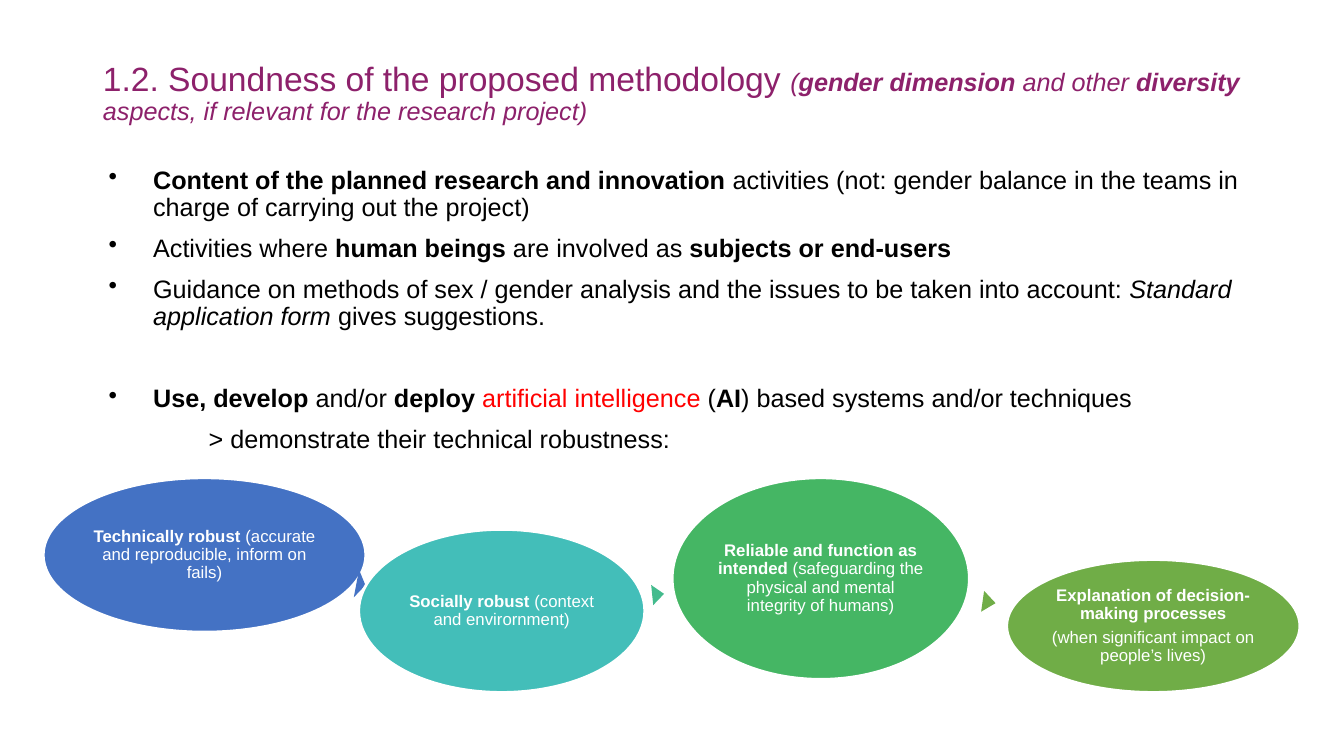
import lxml.etree
import pptx
import pptx.dml.color
import pptx.enum.shapes
import pptx.enum.text
import pptx.oxml.ns
import pptx.util

Cm, Pt = pptx.util.Cm, pptx.util.Pt
SHAPE = pptx.enum.shapes.MSO_SHAPE
ALIGN = pptx.enum.text.PP_ALIGN
ANCHOR = pptx.enum.text.MSO_ANCHOR

PURPLE, BLACK, RED, WHITE = "8D216B", "000000", "FF0000", "FFFFFF"

# Boxes: left, top, width, height in cm
TITLE_BOX = (2.34, 1.02, 29.21, 2.69)
BODY_BOX = (2.34, 4.09, 29.21, 13.08)
CHAIN_BOX = (1.09, 12.04, 31.67, 5.41)

# Text spans: wording, then style letters (b bold, i italic, r red, l large)
TITLE = [
    ("1.2. Soundness of the proposed methodology ", "l"), ("(", "i"),
    ("gender dimension ", "bi"), ("and other ", "i"), ("diversity", "bi"),
    (" aspects, if relevant for the research project)", "i"),
]
# Body paragraphs: space before in points, bulleted, spans
BODY = [
    (0, True, [
        ("Content of the planned research and innovation ", "b"),
        ("activities (not: gender balance in the teams in charge of "
         "carrying out the project)", "")]),
    (10, True, [
        ("Activities where ", ""), ("human beings ", "b"),
        ("are involved as ", ""), ("subjects or end-users", "b")]),
    (10, True, [
        ("Guidance on methods of sex / gender analysis and the issues "
         "to be taken into account: ", ""),
        ("Standard application form ", "i"), ("gives suggestions.", "")]),
    (39, True, [
        ("Use, develop", "b"), (" and/or ", ""), ("deploy ", "b"),
        ("artificial intelligence ", "r"), ("(", ""), ("AI", "b"),
        (") based systems and/or techniques", "")]),
    (10, False, [("> demonstrate their technical robustness:", "")]),
]
# Ellipses: place within the chain, colour, paragraphs of spans
ELLIPSES = [
    ((0, 0, 8.13, 3.89), "4472C4", [[
        ("Technically robust ", "b"),
        ("(accurate and reproducible, inform on fails)", "")]]),
    ((7.95, 1.3, 7.21, 4.11), "43BEB9", [[
        ("Socially robust ", "b"), ("(context and envirornment)", "")]]),
    ((15.85, 0, 7.49, 5.08), "45B664", [[
        ("Reliable and function as intended ", "b"),
        ("(safeguarding the physical and mental integrity of humans)", "")]]),
    ((24.28, 2.06, 7.39, 3.35), "70AD47", [
        [("Explanation of decision-making processes", "b")],
        [("(when significant impact on people’s lives)", "")]]),
]
# Arrowheads after the first three ellipses: place, colour, rotation
ARROWS = [
    ((7.65, 2.57, 0.71, 0.23), "4472C4", 100.7),
    ((15.24, 2.79, 0.51, 0.3), "43BB8D", 84.1),
    ((23.57, 2.97, 0.53, 0.33), "70AD47", 98.1),
]


def rgb(value):
    return pptx.dml.color.RGBColor.from_string(value)


def write(para, spans, size, color, align=ALIGN.LEFT):
    para.alignment = align
    para.line_spacing = 0.9
    para.font.name = "Arial"
    para.font.size = Pt(size)
    para.font.color.rgb = rgb(color)
    for words, style in spans:
        span = para.add_run()
        span.text = words
        if "b" in style:
            span.font.bold = True
        if "i" in style:
            span.font.italic = True
        if "l" in style:
            span.font.size = Pt(24)
        if "r" in style:
            span.font.color.rgb = rgb(RED)


def paragraph_at(frame, index):
    return frame.add_paragraph() if index else frame.paragraphs[0]


def indent(para, bulleted):
    properties = para._p.get_or_add_pPr()
    properties.set("marL", str(Cm(1.27 if bulleted else 2.67)))
    properties.set("indent", str(Cm(-1.12 if bulleted else 0)))
    if bulleted:
        bullet = lxml.etree.SubElement(properties, pptx.oxml.ns.qn("a:buChar"))
        bullet.set("char", "•")


def add_title(page, box):
    title = page.shapes.title
    title.left, title.top, title.width, title.height = map(Cm, box)
    frame = title.text_frame
    frame.auto_size = pptx.enum.text.MSO_AUTO_SIZE.NONE
    frame.vertical_anchor = ANCHOR.MIDDLE
    write(frame.paragraphs[0], TITLE, 18, PURPLE)


def add_body(page, box):
    frame = page.shapes.add_textbox(*map(Cm, box)).text_frame
    frame.word_wrap = True
    for index, (gap, bulleted, spans) in enumerate(BODY):
        para = paragraph_at(frame, index)
        indent(para, bulleted)
        para.space_before = Pt(gap)
        write(para, spans, 18, BLACK)


def add_filled(page, kind, box, place, color):
    left, top, width, height = place
    shape = page.shapes.add_shape(
        kind, Cm(box[0] + left), Cm(box[1] + top), Cm(width), Cm(height))
    shape.shadow.inherit = False
    shape.fill.solid()
    shape.fill.fore_color.rgb = rgb(color)
    return shape


def add_ellipse(page, box, place, color, paragraphs):
    ellipse = add_filled(page, SHAPE.OVAL, box, place, color)
    ellipse.line.color.rgb = rgb(WHITE)
    ellipse.line.width = Pt(2)
    frame = ellipse.text_frame
    frame.word_wrap = True
    frame.vertical_anchor = ANCHOR.MIDDLE
    frame.margin_left = frame.margin_right = Cm(0.05)
    frame.margin_top = frame.margin_bottom = Cm(0.05)
    for index, spans in enumerate(paragraphs):
        para = paragraph_at(frame, index)
        para.space_before = Pt(4 if index else 0)
        write(para, spans, 12, WHITE, ALIGN.CENTER)


def add_chain(page, box):
    for index, ellipse in enumerate(ELLIPSES):
        add_ellipse(page, box, *ellipse)
        if index < len(ARROWS):
            place, color, rotation = ARROWS[index]
            arrow = add_filled(
                page, SHAPE.ISOSCELES_TRIANGLE, box, place, color)
            arrow.line.fill.background()
            arrow.rotation = rotation


def main():
    deck = pptx.Presentation()
    deck.slide_width, deck.slide_height = Cm(33.87), Cm(19.05)
    page = deck.slides.add_slide(deck.slide_layouts.get_by_name("Title Only"))
    add_title(page, TITLE_BOX)
    add_body(page, BODY_BOX)
    add_chain(page, CHAIN_BOX)
    deck.save("out.pptx")


if __name__ == "__main__":
    main()
